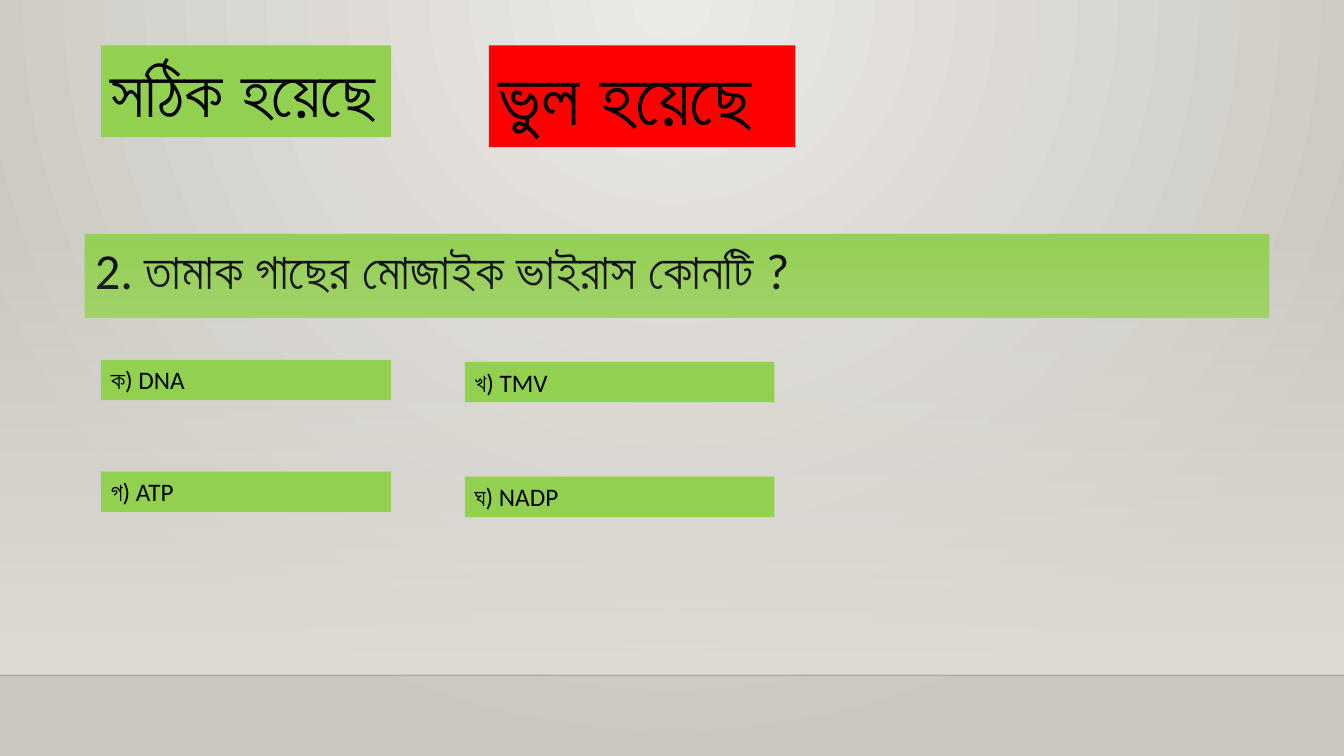
from lxml import etree
from pptx import Presentation
from pptx.dml.color import RGBColor
from pptx.enum.shapes import MSO_CONNECTOR, MSO_SHAPE
from pptx.enum.text import MSO_ANCHOR, MSO_AUTO_SIZE, PP_ALIGN
from pptx.oxml.ns import qn
from pptx.util import Inches, Pt

BLACK = RGBColor(0x00, 0x00, 0x00)
GREEN = RGBColor(0x92, 0xD0, 0x50)
RED = RGBColor(0xFF, 0x00, 0x00)
WALL_LIGHT = RGBColor(0xEC, 0xEA, 0xE7)
WALL_DARK = RGBColor(0xCA, 0xC7, 0xC1)
HAZE = RGBColor(0xDF, 0xDB, 0xD5)

prs = Presentation()
prs.slide_width, prs.slide_height = Inches(13.33), Inches(7.5)
s = prs.slides.add_slide(prs.slide_layouts.get_by_name("Title Only"))
FLOOR = 6.7


def set_alpha(color_parent, percent):
    color = color_parent.find(".//" + qn("a:srgbClr"))
    etree.SubElement(color, qn("a:alpha"), val=str(percent * 1000))


def fill_label(sp, box, text, size, color, bold=False):
    """Place a shape and give it a solid fill and one left-aligned line."""
    sp.left, sp.top, sp.width, sp.height = [Inches(v) for v in box]
    sp.fill.solid()
    sp.fill.fore_color.rgb = color
    tf = sp.text_frame
    tf.word_wrap = True
    tf.auto_size = MSO_AUTO_SIZE.SHAPE_TO_FIT_TEXT
    tf.vertical_anchor = MSO_ANCHOR.TOP
    p = tf.paragraphs[0]
    p.text = text
    p.alignment = PP_ALIGN.LEFT
    p.font.name, p.font.size, p.font.bold = "Calibri", Pt(size), bold
    p.font.color.rgb = BLACK


# Background: light falling from the top centre
fill = s.background.fill
fill.gradient()
for stop, color in zip(fill.gradient_stops, (WALL_LIGHT, WALL_DARK)):
    stop.color.rgb = color
linear = s.background._cSld.find(".//" + qn("a:lin"))
circle = etree.Element(qn("a:path"), {"path": "circle"})
etree.SubElement(circle, qn("a:fillToRect"), l="43000", t="0", r="43000", b="100000")
linear.getparent().replace(linear, circle)

# Haze above the floor, fading in downwards
haze = s.shapes.add_shape(MSO_SHAPE.RECTANGLE, 0, Inches(2.21),
                          prs.slide_width, Inches(FLOOR - 2.21))
haze.shadow.inherit = False
haze.line.fill.background()
haze.fill.gradient()
haze.fill.gradient_angle = 270
for stop in haze.fill.gradient_stops:
    stop.color.rgb = HAZE
set_alpha(haze._element.spPr.find(".//" + qn("a:gs")), 0)

# Floor edge
edge = s.shapes.add_connector(MSO_CONNECTOR.STRAIGHT, 0, Inches(FLOOR),
                              prs.slide_width, Inches(FLOOR))
edge.line.color.rgb = BLACK
edge.line.width = Pt(1)
set_alpha(edge.line._ln, 20)
etree.SubElement(edge._element.spPr, qn("a:effectLst"))

# Question
fill_label(s.shapes.title, (0.84, 2.32, 11.75, 0.71),
           "2. তামাক গাছের মোজাইক ভাইরাস কোনটি ?", 36, GREEN)

# Verdicts and answer options
labels = [
    ((1, 0.45, 2.88, 0.91), "সঠিক হয়েছে", 48, GREEN, True),
    ((4.85, 0.45, 3.04, 1.01), "ভুল হয়েছে", 54, RED, True),
    ((1, 3.57, 2.88, 0.4), "ক) DNA", 18, GREEN),
    ((4.61, 3.59, 3.07, 0.4), "খ) TMV", 18, GREEN),
    ((1, 4.68, 2.88, 0.4), "গ) ATP", 18, GREEN),
    ((4.61, 4.73, 3.07, 0.4), "ঘ) NADP", 18, GREEN),
]
for label in labels:
    fill_label(s.shapes.add_textbox(0, 0, 0, 0), *label)

prs.save("out.pptx")
